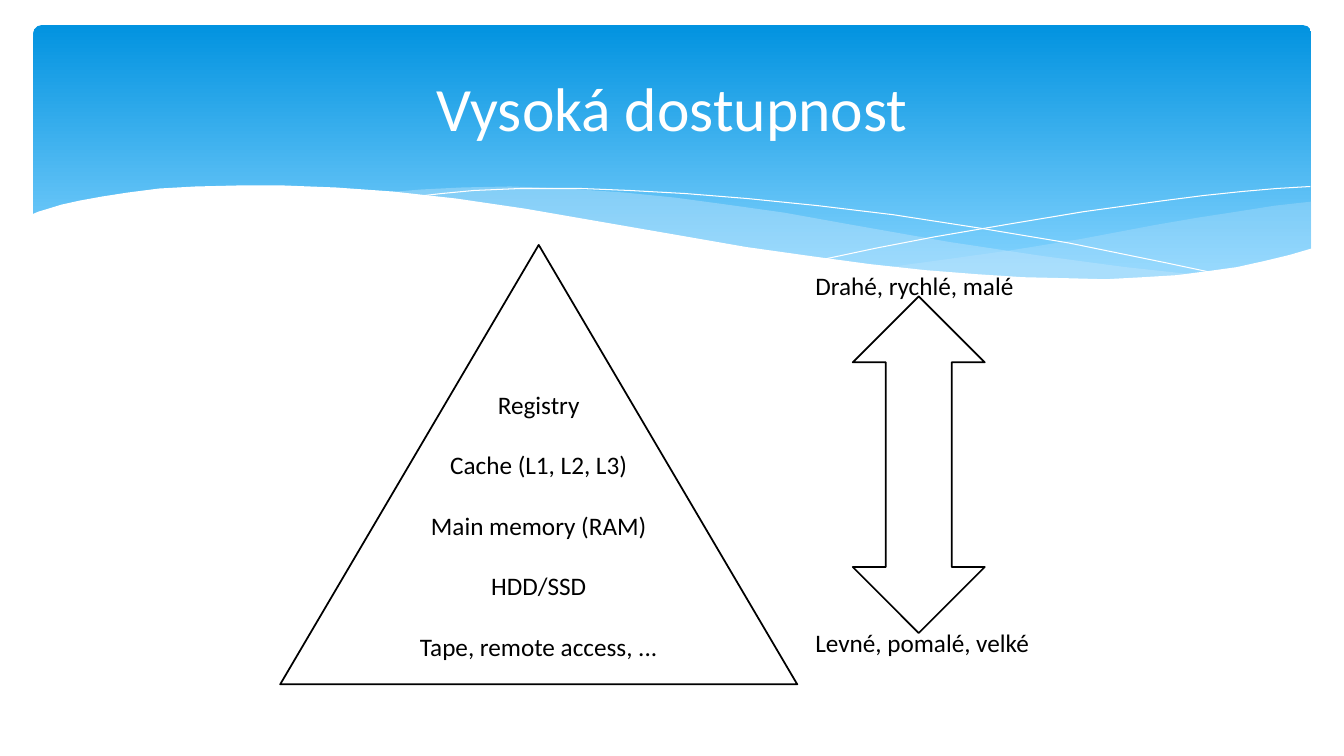
import pptx
import pptx.util
import pptx.dml.color
import pptx.enum.shapes
import pptx.enum.text
import pptx.oxml.ns
import lxml.etree

SHAPE = pptx.enum.shapes.MSO_SHAPE
ALIGN = pptx.enum.text.PP_ALIGN
COLS, ROWS = 40 / 3, 7.5
CELL = pptx.util.Inches(1)
STEPS = 100

COLORS = {
    "white": "FFFFFF",
    "black": "000000",
    "sky_top": "0293E0",
    "sky_bottom": "83D3FE",
    "mist": "C6E7FC",
}

LABEL = {"size": pptx.util.Pt(18), "name": "Calibri"}
HEADING = {"size": pptx.util.Pt(44), "name": "Calibri"}

LEVELS = ["Registry", "Cache (L1, L2, L3)", "Main memory (RAM)", "HDD/SSD",
          "Tape, remote access, ..."]

RIGHT_WAVE = [
    (13.01, 2), (12.65, 2.04), (12.27, 2.1), (11.88, 2.16), (11.47, 2.23),
    (10.73, 2.37), (10.05, 2.48), (9.41, 2.57), (8.82, 2.65), (9.21, 2.69),
    (9.76, 2.74), (10.25, 2.77), (10.71, 2.78), (11.26, 2.77), (11.74, 2.73),
    (12.18, 2.67), (12.57, 2.59), (13.01, 2.47)]

MIDDLE_WAVE = [
    (11.9, 2.73), (11.16, 2.65), (10.34, 2.54), (9.41, 2.4), (8.39, 2.22),
    (7.78, 2.11), (7.21, 2.03), (6.69, 1.96), (6.19, 1.91), (5.6, 1.87),
    (5.06, 1.85), (4.59, 1.86), (4.18, 1.88), (3.82, 1.91), (4.31, 1.96),
    (4.83, 2.03), (5.39, 2.11), (5.99, 2.22), (6.54, 2.32), (7.06, 2.4),
    (7.55, 2.48), (8.02, 2.55), (8.46, 2.61), (8.87, 2.66), (9.26, 2.7),
    (9.81, 2.75), (10.3, 2.77), (10.76, 2.78), (11.18, 2.78), (11.56, 2.76)]

FALLING_LINE = [
    (4.12, 1.95), (4.38, 1.92), (4.7, 1.89), (5.16, 1.87), (5.77, 1.87),
    (6.25, 1.89), (6.8, 1.92), (7.42, 1.97), (8.11, 2.04), (8.86, 2.13),
    (9.7, 2.26), (10.6, 2.41), (11.58, 2.61), (12.1, 2.72)]

RISING_LINE = [
    (8.18, 2.57), (8.7, 2.46), (9.27, 2.35), (9.97, 2.23), (10.75, 2.1),
    (11.55, 1.99), (11.94, 1.94), (12.32, 1.9), (12.67, 1.87), (13, 1.85)]

WHITE_WAVE = [
    (13.03, 2.46), (12.79, 2.53), (12.54, 2.59), (12.27, 2.65), (11.98, 2.69),
    (11.67, 2.73), (11.34, 2.75), (10.97, 2.77), (10.58, 2.76), (10.15, 2.75),
    (9.69, 2.72), (9.18, 2.68), (8.63, 2.62), (8.04, 2.54), (7.4, 2.45),
    (6.71, 2.33), (5.96, 2.2), (5.21, 2.07), (4.53, 1.97), (3.9, 1.9),
    (3.33, 1.86), (2.82, 1.84), (2.35, 1.84), (1.94, 1.85), (1.58, 1.87),
    (1.27, 1.91), (1.01, 1.95), (0.79, 1.99), (0.61, 2.03), (0.48, 2.07),
    (0.38, 2.1), (0.31, 2.13), (0.31, 3.29), (13.03, 3.29)]


def rgb(name):
    return pptx.dml.color.RGBColor.from_string(COLORS[name])


def set_all(obj, values):
    for key, value in values.items():
        setattr(obj, key, value)


def box(col, row, cols, rows):
    return [round(n * CELL) for n in (col, row, cols, rows)]


def paint(sp, fill=None, line=None, width=0, alpha=None):
    sp.shadow.inherit = False
    if fill:
        sp.fill.solid()
        sp.fill.fore_color.rgb = rgb(fill)
    else:
        sp.fill.background()
    if alpha:
        clr = sp.element.spPr.find(".//" + pptx.oxml.ns.qn("a:srgbClr"))
        lxml.etree.SubElement(clr, pptx.oxml.ns.qn("a:alpha"), val=str(alpha * 1000))
    if line:
        sp.line.color.rgb = rgb(line)
        sp.line.width = pptx.util.Pt(width)
    else:
        sp.line.fill.background()


def add_curve(s, points, close, **look):
    steps = [(x * STEPS, y * STEPS) for x, y in points]
    builder = s.shapes.build_freeform(*steps[0], scale=CELL / STEPS)
    builder.add_line_segments(steps[1:], close=close)
    paint(builder.convert_to_shape(), **look)


def add_sky(s):
    sp = s.shapes.add_shape(SHAPE.ROUNDED_RECTANGLE, *box(0.33, 0.25, 12.68, 2.7))
    sp.adjustments[0] = 0.03
    paint(sp)
    sp.fill.gradient()
    sp.fill.gradient_angle = 270
    stops = zip(sp.fill.gradient_stops, [("sky_top", 0), ("sky_bottom", 0.9)])
    for stop, (name, position) in stops:
        stop.color.rgb = rgb(name)
        stop.position = position


def add_outline(s, kind, place):
    sp = s.shapes.add_shape(kind, *box(*place))
    paint(sp, fill="white", line="black", width=1.25)


def write(tf, lines, font, color, **paragraph):
    for i, text in enumerate(lines):
        p = tf.add_paragraph() if i else tf.paragraphs[0]
        set_all(p, paragraph)
        r = p.add_run()
        r.text = text
        set_all(r.font, font)
        r.font.color.rgb = rgb(color)


def add_label(s, place, lines, wrap, **paragraph):
    tf = s.shapes.add_textbox(*box(*place)).text_frame
    set_all(tf, {"word_wrap": wrap,
                 "auto_size": pptx.enum.text.MSO_AUTO_SIZE.SHAPE_TO_FIT_TEXT})
    write(tf, lines, LABEL, "black", **paragraph)


def add_title(s, text):
    title = s.shapes.title
    s.shapes.element.append(title.element)
    set_all(title, dict(zip(("left", "top", "width", "height"),
                            box(0.67, 0.37, 12, 1.37))))
    title.text_frame.vertical_anchor = pptx.enum.text.MSO_ANCHOR.MIDDLE
    write(title.text_frame, [text], HEADING, "white", alignment=ALIGN.CENTER)


def main():
    prs = pptx.Presentation()
    set_all(prs, {"slide_width": round(COLS * CELL), "slide_height": round(ROWS * CELL)})
    s = prs.slides.add_slide(prs.slide_layouts[5])

    add_sky(s)
    add_curve(s, RIGHT_WAVE, True, fill="mist", alpha=29)
    add_curve(s, MIDDLE_WAVE, True, fill="mist", alpha=40)
    for points in (FALLING_LINE, RISING_LINE):
        add_curve(s, points, False, line="white")
    add_curve(s, WHITE_WAVE, True, fill="white")
    add_title(s, "Vysoká dostupnost")

    add_outline(s, SHAPE.ISOSCELES_TRIANGLE, (2.78, 2.43, 5.13, 4.36))
    add_outline(s, SHAPE.UP_DOWN_ARROW, (8.46, 2.94, 1.31, 3.34))
    add_label(s, (2.78, 3.51, 5.13, 3.43), LEVELS, True,
              alignment=ALIGN.CENTER, line_spacing=2.0)
    add_label(s, (7.99, 2.63, 2.24, 0.4), ["Drahé, rychlé, malé"], False)
    add_label(s, (7.99, 6.17, 2.44, 0.4), ["Levné, pomalé, velké"], False)
    prs.save("out.pptx")


if __name__ == "__main__":
    main()
